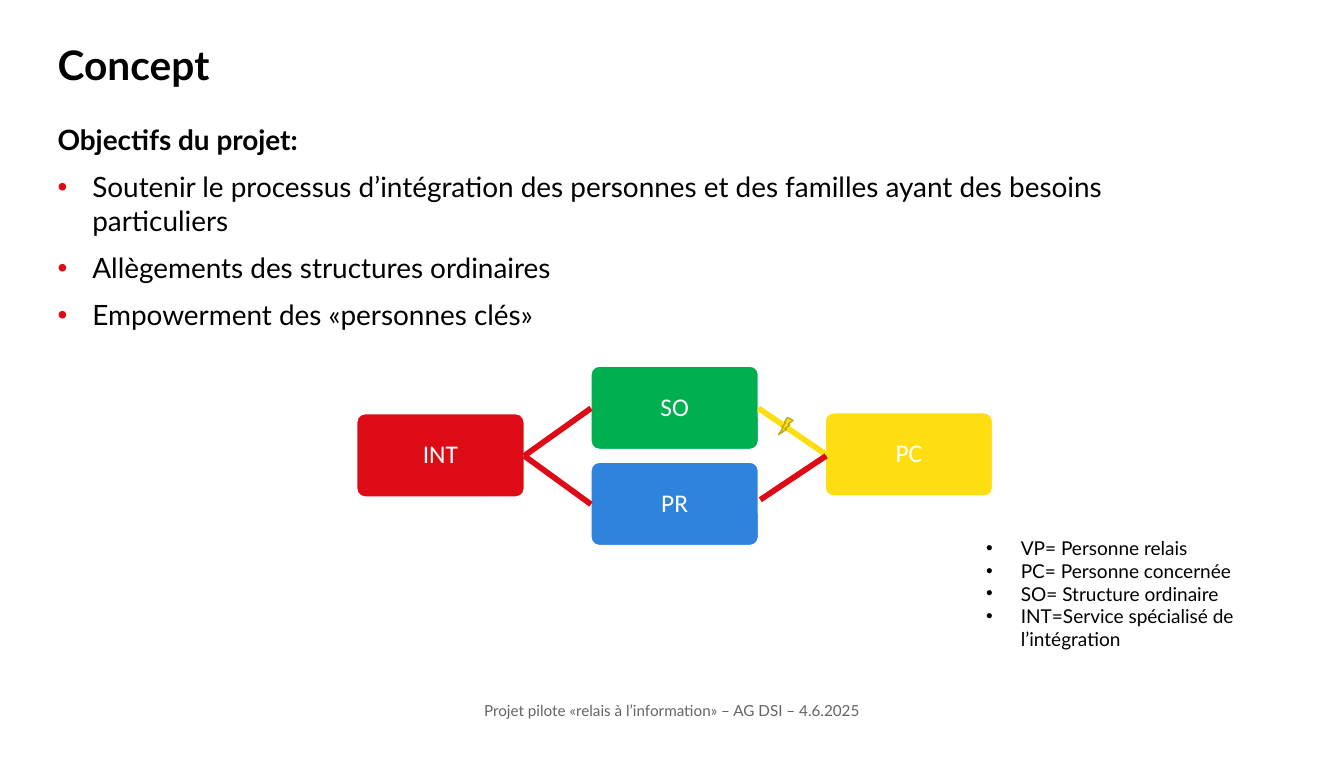
from lxml import etree
from pptx import Presentation
from pptx import util as u
from pptx.dml.color import RGBColor
from pptx.enum import shapes, text
from pptx.oxml.ns import qn

RED = RGBColor(0xDD, 0x0B, 0x15)
GREEN = RGBColor(0x00, 0xB0, 0x50)
BLUE = RGBColor(0x2E, 0x83, 0xDD)
YELLOW = RGBColor(0xFF, 0xDE, 0x11)
OCHRE = RGBColor(0xBD, 0xA4, 0x0D)
GREY = RGBColor(0x64, 0x64, 0x64)
BLACK = RGBColor(0, 0, 0)
WHITE = RGBColor(0xFF, 0xFF, 0xFF)

BOX_W, BOX_H = 1.83, 0.91

prs = Presentation()
prs.slide_width = u.Inches(14.69)
prs.slide_height = u.Inches(8.27)
s = prs.slides.add_slide(prs.slide_layouts[6])


def add_text(left, top, width, height, lines, size, color=BLACK, inset=0.0,
             spacing=None, before=0, bullet_color=BLACK):
    tf = s.shapes.add_textbox(*map(u.Inches, (left, top, width, height))).text_frame
    tf.word_wrap = True
    if not inset:
        tf.margin_left = tf.margin_right = tf.margin_top = tf.margin_bottom = 0
    for i, (line, bold, bulleted) in enumerate(lines):
        p = tf.paragraphs[0] if i == 0 else tf.add_paragraph()
        if bulleted:
            pPr = p._p.get_or_add_pPr()
            pPr.set("marL", str(u.Inches(0.38)))
            pPr.set("indent", str(-u.Inches(0.38)))
            clr = etree.SubElement(pPr, qn("a:buClr"))
            etree.SubElement(clr, qn("a:srgbClr"), val=str(bullet_color))
            etree.SubElement(pPr, qn("a:buFont"), typeface="Arial")
            etree.SubElement(pPr, qn("a:buChar"), char="•")
        if spacing:
            p.line_spacing = u.Pt(spacing)
        if i and before:
            p.space_before = u.Pt(before)
        r = p.add_run()
        r.text = line
        r.font.name, r.font.size, r.font.bold = "Lato", u.Pt(size), bold
        r.font.color.rgb = color
    return tf


def add_preset(kind, left, top, width, height, fill, line):
    sp = s.shapes.add_shape(kind, *map(u.Inches, (left, top, width, height)))
    sp.shadow.inherit = False
    sp.fill.solid()
    sp.fill.fore_color.rgb = fill
    sp.line.color.rgb = line
    sp.line.width = u.Pt(1)
    return sp


add_text(0.63, 0.41, 6.35, 0.47, [("Concept", True, False)], 32, spacing=40)

add_text(0.63, 1.33, 12.67, 2.63, [
    ("Objectifs du projet:", True, False),
    ("Soutenir le processus d’intégration des personnes et des familles ayant des besoins particuliers", False, True),
    ("Allègements des structures ordinaires", False, True),
    ("Empowerment des «personnes clés»", False, True),
], 22, spacing=27, before=10, bullet_color=RED)

legend = ["VP= Personne relais", "PC= Personne concernée", "SO= Structure ordinaire",
          "INT=Service spécialisé de l’intégration"]
add_text(10.68, 5.81, 3.33, 1.36, [(line, False, True) for line in legend], 15, inset=0.1)

boxes = [("INT", 3.9, 4.52, RED), ("SO", 6.46, 4.0, GREEN),
         ("PC", 9.02, 4.51, YELLOW), ("PR", 6.46, 5.05, BLUE)]
for label, left, top, color in boxes:
    sp = add_preset(shapes.MSO_SHAPE.ROUNDED_RECTANGLE, left, top, BOX_W, BOX_H, color, WHITE)
    sp.adjustments[0] = 0.1
    tf = sp.text_frame
    tf.vertical_anchor = text.MSO_ANCHOR.MIDDLE
    p = tf.paragraphs[0]
    p.alignment = text.PP_ALIGN.CENTER
    p.line_spacing = 0.9
    r = p.add_run()
    r.text = label
    r.font.name, r.font.size = "Calibri", u.Pt(20)
    r.font.color.rgb = WHITE

links = [(5.73, 4.98, 6.46, 4.46, RED), (5.73, 4.98, 6.46, 5.51, RED),
         (8.29, 4.46, 9.02, 4.96, YELLOW), (8.31, 5.46, 9.03, 4.98, RED)]
for x1, y1, x2, y2, color in links:
    link = s.shapes.add_connector(shapes.MSO_CONNECTOR.STRAIGHT, *map(u.Inches, (x1, y1, x2, y2)))
    link.line.color.rgb = color
    link.line.width = u.Pt(4.5)
    etree.SubElement(link._element.spPr, qn("a:effectLst"))

bolt = add_preset(shapes.MSO_SHAPE.LIGHTNING_BOLT, 8.51, 4.56, 0.16, 0.19, YELLOW, OCHRE)
bolt._element.spPr.find(qn("a:xfrm")).set("flipH", "1")

tf = add_text(2.62, 7.54, 9.45, 0.44,
              [("Projet pilote «relais à l’information» – AG DSI – 4.6.2025", False, False)],
              12, GREY, inset=0.1)
tf.vertical_anchor = text.MSO_ANCHOR.MIDDLE
tf.paragraphs[0].alignment = text.PP_ALIGN.CENTER

prs.save("out.pptx")
